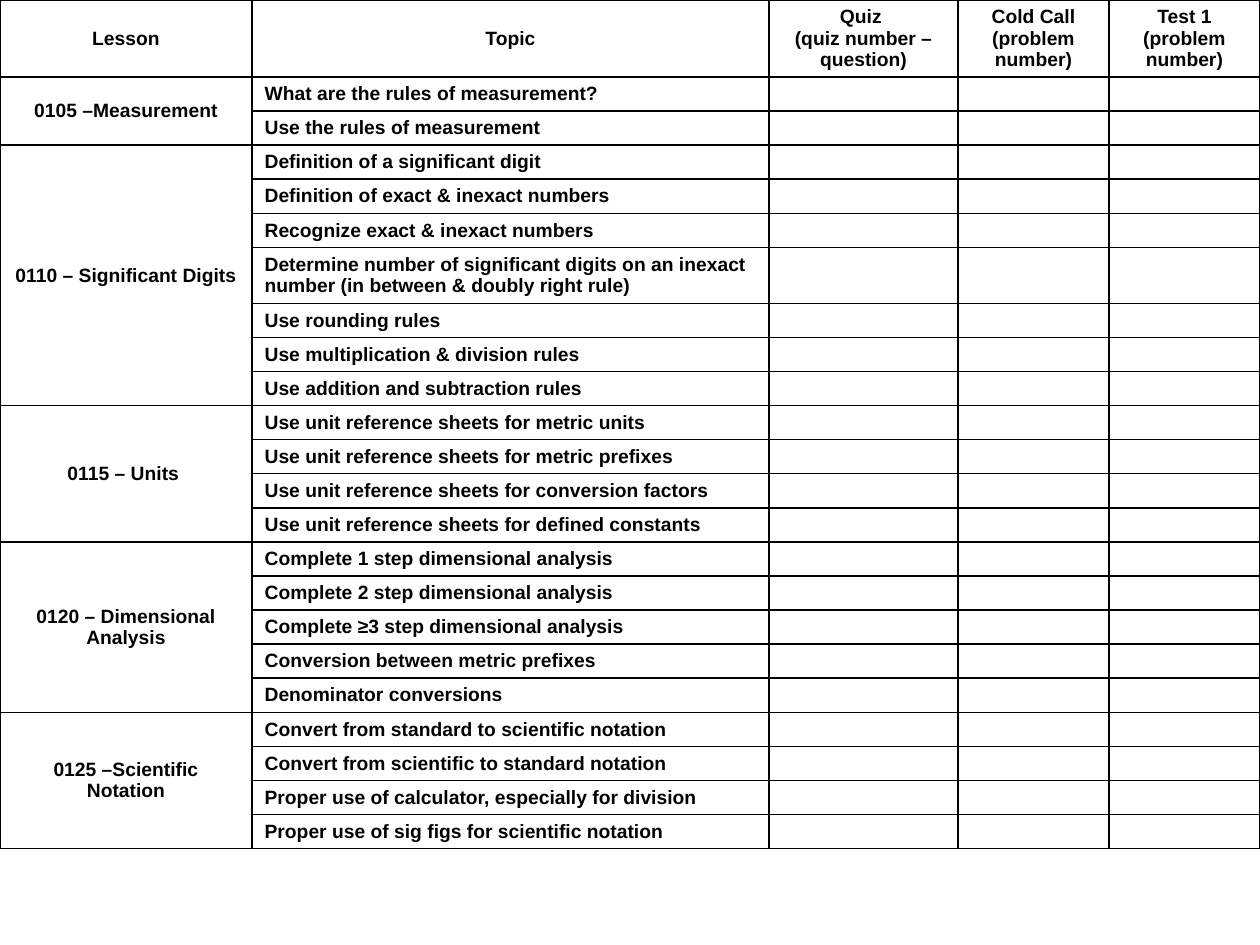
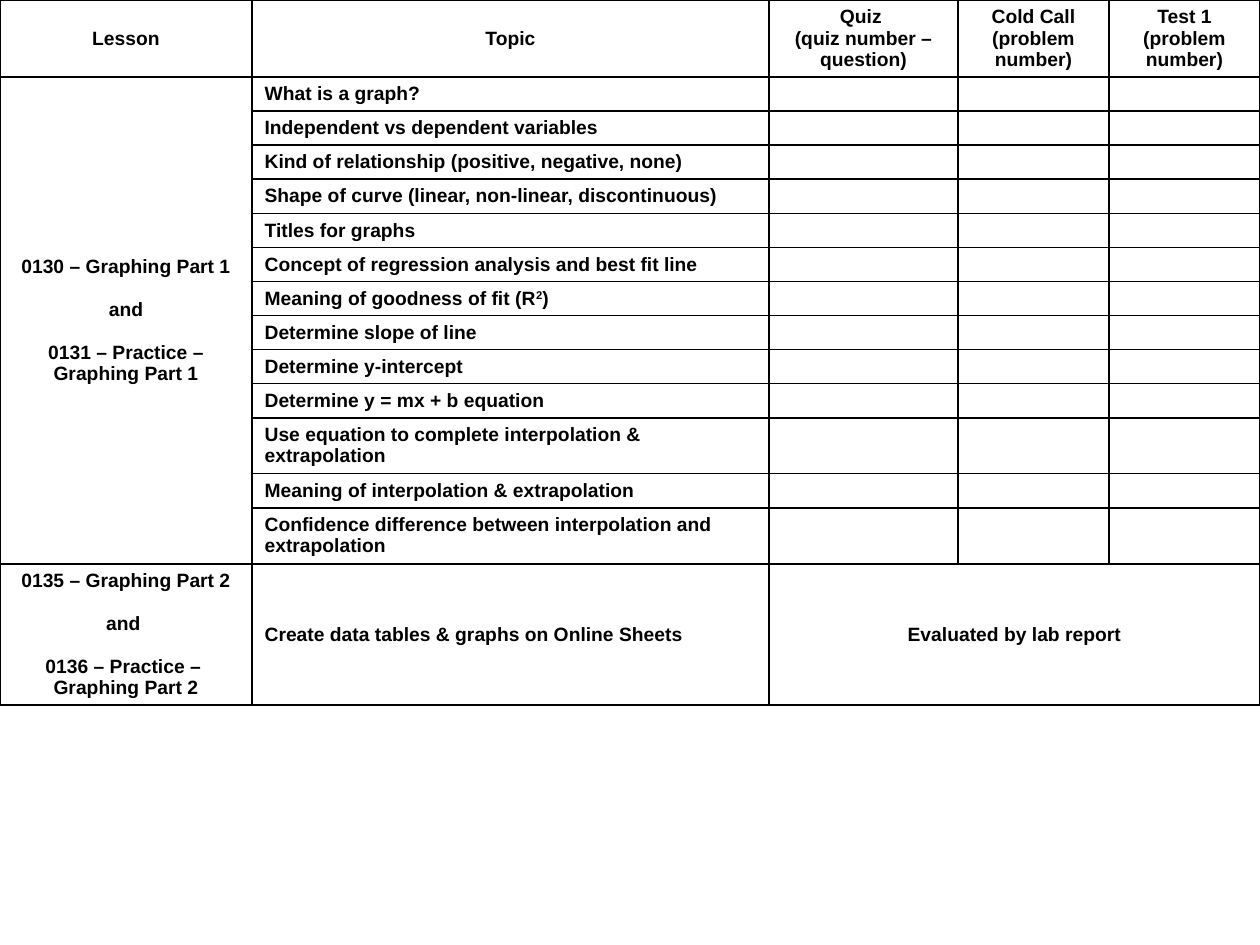
from dataclasses import dataclass

from lxml.etree import SubElement
from pptx import Presentation
from pptx.dml.color import RGBColor
from pptx.enum.text import MSO_ANCHOR, PP_ALIGN
from pptx.oxml.ns import qn
from pptx.util import Emu, Pt

EMU_PER_PX = 914400 / 126
SLIDE_WIDTH, SLIDE_HEIGHT = 1260, 945
COLUMN_WIDTHS = [252, 517, 189, 151, 151]
HEADER_HEIGHT, ONE_LINE_HEIGHT, TWO_LINE_HEIGHT, EVALUATED_HEIGHT = 77, 34, 56, 141
LONGEST_ONE_LINE_TOPIC = 50
BLANK_LAYOUT = 6


@dataclass(frozen=True)
class Theme:
    font: str = "Arial"
    size: float = 11
    ink: str = "000000"
    paper: str = "FFFFFF"
    border: float = 1
    block_gap: float = 12.2


THEME = Theme()


@dataclass(frozen=True)
class Lesson:
    name: str
    topics: list
    evaluation: str = ""


HEADINGS = [
    "Lesson",
    "Topic",
    "Quiz \n(quiz number – question)",
    "Cold Call (problem number)",
    "Test 1 (problem number)",
]

MEASUREMENT_LESSONS = [
    Lesson("0105 –Measurement", [
        "What are the rules of measurement?",
        "Use the rules of measurement",
    ]),
    Lesson("0110 – Significant Digits", [
        "Definition of a significant digit",
        "Definition of exact & inexact numbers",
        "Recognize exact & inexact numbers",
        "Determine number of significant digits on an inexact number "
        "(in between & doubly right rule)",
        "Use rounding rules",
        "Use multiplication & division rules",
        "Use addition and subtraction rules",
    ]),
    Lesson("0115 – Units ", [
        "Use unit reference sheets for metric units",
        "Use unit reference sheets for metric prefixes",
        "Use unit reference sheets for conversion factors",
        "Use unit reference sheets for defined constants",
    ]),
    Lesson("0120 – Dimensional Analysis", [
        "Complete 1 step dimensional analysis",
        "Complete 2 step dimensional analysis",
        "Complete ≥3 step dimensional analysis",
        "Conversion between metric prefixes",
        "Denominator conversions",
    ]),
    Lesson("0125 –Scientific Notation", [
        "Convert from standard to scientific notation",
        "Convert from scientific to standard notation",
        "Proper use of calculator, especially for division",
        "Proper use of sig figs for scientific notation",
    ]),
]

GRAPHING_LESSONS = [
    Lesson("0130 – Graphing Part 1\n\nand\n\n0131 – Practice –\nGraphing Part 1", [
        "What is a graph?",
        "Independent vs dependent variables",
        "Kind of relationship (positive, negative, none)",
        "Shape of curve (linear, non-linear, discontinuous)",
        "Titles for graphs",
        "Concept of regression analysis and best fit line",
        "Meaning of goodness of fit (R²)",
        "Determine slope of line",
        "Determine y-intercept",
        "Determine y = mx + b equation",
        "Use equation to complete interpolation & extrapolation",
        "Meaning of interpolation & extrapolation",
        "Confidence difference between interpolation and extrapolation",
    ]),
    Lesson(
        "0135 – Graphing Part 2\n\nand \n\n0136 – Practice – \nGraphing Part 2",
        ["Create data tables & graphs on Online Sheets"],
        evaluation="Evaluated by lab report",
    ),
]


def px(length):
    return Emu(round(length * EMU_PER_PX))


def add_text(paragraph, text):
    """Add runs to the paragraph, raising each ² as a superscript 2."""
    before, square, after = text.partition("²")
    paragraph.add_run().text = before
    if square:
        raised = paragraph.add_run()
        raised.text = "2"
        raised.font._element.set("baseline", "30000")
        paragraph.add_run().text = after


def format_paragraph(paragraph, alignment):
    paragraph.alignment = alignment
    font = paragraph.font
    font.name = THEME.font
    font.size = Pt(THEME.size)
    font.bold = True
    font.color.rgb = RGBColor.from_string(THEME.ink)


def write_cell(cell, text, alignment=PP_ALIGN.CENTER, anchor=MSO_ANCHOR.MIDDLE):
    """Write one paragraph per line; an empty line becomes space before the next."""
    cell.vertical_anchor = anchor
    frame = cell.text_frame
    for number, block in enumerate(text.split("\n\n")):
        for line_number, line in enumerate(block.split("\n")):
            first = number == line_number == 0
            paragraph = frame.paragraphs[0] if first else frame.add_paragraph()
            add_text(paragraph, line)
            format_paragraph(paragraph, alignment)
            if number and line_number == 0:
                paragraph.space_before = Pt(THEME.block_gap)


def style_empty_cell(cell):
    paragraph = cell.text_frame.paragraphs[0]
    format_paragraph(paragraph, PP_ALIGN.LEFT)
    SubElement(paragraph._p, qn("a:endParaRPr"), sz=str(THEME.size * 100))


def style_cell_frame(cell):
    """Fill the cell and draw its four borders."""
    cell.fill.solid()
    cell.fill.fore_color.rgb = RGBColor.from_string(THEME.paper)
    properties = cell._tc.get_or_add_tcPr()
    for position, side in enumerate(("a:lnL", "a:lnR", "a:lnT", "a:lnB")):
        line = SubElement(properties, qn(side), w=str(Pt(THEME.border)))
        fill = SubElement(line, qn("a:solidFill"))
        SubElement(fill, qn("a:srgbClr"), val=THEME.ink)
        properties.insert(position, line)


def row_heights(lessons):
    heights = [HEADER_HEIGHT]
    for lesson in lessons:
        for topic in lesson.topics:
            if lesson.evaluation:
                heights.append(EVALUATED_HEIGHT)
            elif len(topic) > LONGEST_ONE_LINE_TOPIC:
                heights.append(TWO_LINE_HEIGHT)
            else:
                heights.append(ONE_LINE_HEIGHT)
    return heights


def add_empty_table(slide, heights):
    table = slide.shapes.add_table(
        len(heights), len(COLUMN_WIDTHS), 0, 0, px(SLIDE_WIDTH), px(sum(heights))
    ).table
    table.first_row = False
    table.horz_banding = False
    for column, width in zip(table.columns, COLUMN_WIDTHS):
        column.width = px(width)
    for row, height in zip(table.rows, heights):
        row.height = px(height)
    return table


def write_lesson(table, lesson, top):
    """Write a lesson from row top on and return the row after it."""
    bottom = top + len(lesson.topics) - 1
    last_column = len(COLUMN_WIDTHS) - 1
    if bottom > top:
        table.cell(top, 0).merge(table.cell(bottom, 0))
    write_cell(table.cell(top, 0), lesson.name)
    topic_anchor = MSO_ANCHOR.MIDDLE if lesson.evaluation else MSO_ANCHOR.TOP
    for row, topic in enumerate(lesson.topics, top):
        write_cell(table.cell(row, 1), topic, PP_ALIGN.LEFT, topic_anchor)
    if lesson.evaluation:
        table.cell(top, 2).merge(table.cell(bottom, last_column))
        write_cell(table.cell(top, 2), lesson.evaluation)
    return bottom + 1


def add_lesson_slide(presentation, lessons):
    slide = presentation.slides.add_slide(presentation.slide_layouts[BLANK_LAYOUT])
    table = add_empty_table(slide, row_heights(lessons))
    for column, heading in enumerate(HEADINGS):
        write_cell(table.cell(0, column), heading)
    top = 1
    for lesson in lessons:
        top = write_lesson(table, lesson, top)
    for cell in table.iter_cells():
        style_cell_frame(cell)
        if not cell.text_frame.text:
            style_empty_cell(cell)


def main():
    presentation = Presentation()
    presentation.slide_width = px(SLIDE_WIDTH)
    presentation.slide_height = px(SLIDE_HEIGHT)
    for lessons in (MEASUREMENT_LESSONS, GRAPHING_LESSONS):
        add_lesson_slide(presentation, lessons)
    presentation.save("out.pptx")


if __name__ == "__main__":
    main()
